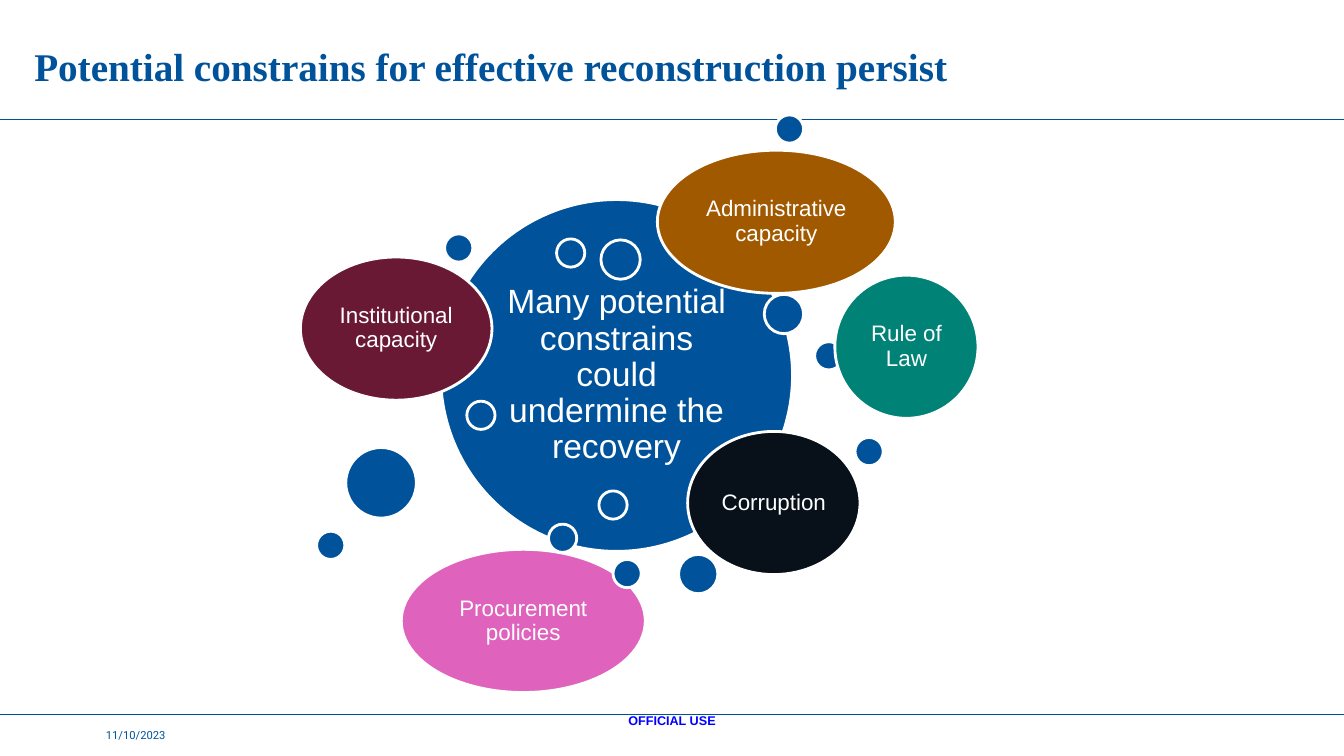
from dataclasses import dataclass

from lxml.etree import SubElement
from pptx import Presentation
from pptx.dml.color import RGBColor
from pptx.enum.shapes import MSO_CONNECTOR, MSO_SHAPE
from pptx.enum.text import MSO_ANCHOR, PP_ALIGN
from pptx.oxml.ns import qn
from pptx.slide import Slide
from pptx.text.text import TextFrame
from pptx.util import Inches, Length, Pt

COLORS = {
    "rule": "005198", "blue": "00539B", "wine": "691934", "brown": "A15900",
    "teal": "008277", "pink": "DF62BC", "black": "08101A",
    "white": "FFFFFF", "label": "0000FF",
}

# Square grid, ten cells to the inch
COLUMNS, ROWS = 133.3, 75
SMALL, MEDIUM, LARGE = 2.8, 3.9, 7
TOPIC_ROWS = 14.2


@dataclass(frozen=True)
class Bubble:
    column: float
    row: float
    columns: float
    rows: float
    color: str = "blue"
    text: str = ""
    size: int = 16
    inset: float = 0.7


@dataclass(frozen=True)
class Label:
    column: float
    row: float
    columns: float
    rows: float
    text: str
    font: str
    size: int
    color: str
    bold: bool = False
    align: PP_ALIGN = PP_ALIGN.LEFT


def dot(column: float, row: float, diameter: float = SMALL) -> Bubble:
    return Bubble(column, row, diameter, diameter)


def topic(column: float, row: float, columns: float, color: str, text: str) -> Bubble:
    return Bubble(column, row, columns, TOPIC_ROWS, color, text)


# From back to front
BUBBLES = [
    Bubble(43.7, 19.8, 34.9, 34.9, "blue",
           "Many potential constrains could undermine the recovery", 24, 1),
    dot(54.4, 52),
    dot(80.8, 33.9),
    dot(67.3, 55, MEDIUM),
    dot(55.2, 23.7),
    dot(46.3, 39.8),
    topic(29.8, 25.5, 19, "wine", "Institutional capacity"),
    dot(59.6, 23.8, MEDIUM),
    dot(34.3, 44.4, LARGE),
    topic(65.2, 14.9, 23.6, "brown", "Administrative capacity"),
    dot(75.8, 29.2, MEDIUM),
    dot(31.4, 52.7),
    dot(59.4, 48.7),
    topic(82.8, 27.3, 14.2, "teal", "Rule of Law"),
    dot(84.8, 43.4),
    topic(39.8, 54.5, 24.2, "pink", "Procurement policies"),
    dot(60.8, 55.5),
    topic(68.2, 42.8, 17.1, "black", "Corruption"),
    dot(44.1, 23.2),
    dot(76.9, 11.4),
]

LABELS = [
    Label(10.5, 70.9, 27.3, 4.1, "11/10/2023", "Roboto", 8, "blue"),
    Label(0, 69.5, COLUMNS, 4, "OFFICIAL USE", "Arial", 9, "label", True, PP_ALIGN.CENTER),
    Label(3.4, 1.2, 102.4, 10.6, "Potential constrains for effective reconstruction persist",
          "Times New Roman", 28, "blue", True),
]

RULE_ROWS = (11.8, 70.9)


def cells(count: float) -> Length:
    return Inches(count / 10)


def color_of(name: str) -> RGBColor:
    return RGBColor.from_string(COLORS[name])


def write(frame: TextFrame, text: str, font: str, size: int, color: str,
          bold: bool, align: PP_ALIGN, inset: float) -> None:
    frame.word_wrap = True
    frame.vertical_anchor = MSO_ANCHOR.MIDDLE
    frame.margin_left = frame.margin_right = cells(inset)
    frame.margin_top = frame.margin_bottom = cells(inset)
    frame.text = text
    para = frame.paragraphs[0]
    para.alignment = align
    for span in para.runs:
        span.font.name = font
        span.font.size = Pt(size)
        span.font.bold = bold
        span.font.color.rgb = color_of(color)


def add_rule(page: Slide, row: float) -> None:
    rule = page.shapes.add_connector(
        MSO_CONNECTOR.STRAIGHT, 0, cells(row), cells(COLUMNS), cells(row))
    rule.line.color.rgb = color_of("rule")
    rule.line.width = Pt(0.25)
    SubElement(rule._element.spPr, qn("a:effectLst"))


def add_bubble(page: Slide, bubble: Bubble) -> None:
    shape = page.shapes.add_shape(
        MSO_SHAPE.OVAL, cells(bubble.column), cells(bubble.row),
        cells(bubble.columns), cells(bubble.rows))
    shape.shadow.inherit = False
    shape.fill.solid()
    shape.fill.fore_color.rgb = color_of(bubble.color)
    shape.line.color.rgb = color_of("white")
    shape.line.width = Pt(2)
    if bubble.text:
        write(shape.text_frame, bubble.text, "Arial", bubble.size, "white",
              False, PP_ALIGN.CENTER, bubble.inset)
        shape.text_frame.paragraphs[0].line_spacing = 0.9


def add_label(page: Slide, label: Label) -> None:
    box = page.shapes.add_textbox(
        cells(label.column), cells(label.row), cells(label.columns), cells(label.rows))
    write(box.text_frame, label.text, label.font, label.size, label.color,
          label.bold, label.align, 0)


def main() -> None:
    deck = Presentation()
    deck.slide_width, deck.slide_height = cells(COLUMNS), cells(ROWS)
    page = deck.slides.add_slide(deck.slide_layouts[6])

    # Header and footer rules
    for row in RULE_ROWS:
        add_rule(page, row)

    # Bubble cluster
    for bubble in BUBBLES:
        add_bubble(page, bubble)

    # Date, classification and title
    for label in LABELS:
        add_label(page, label)

    deck.save("out.pptx")


if __name__ == "__main__":
    main()
